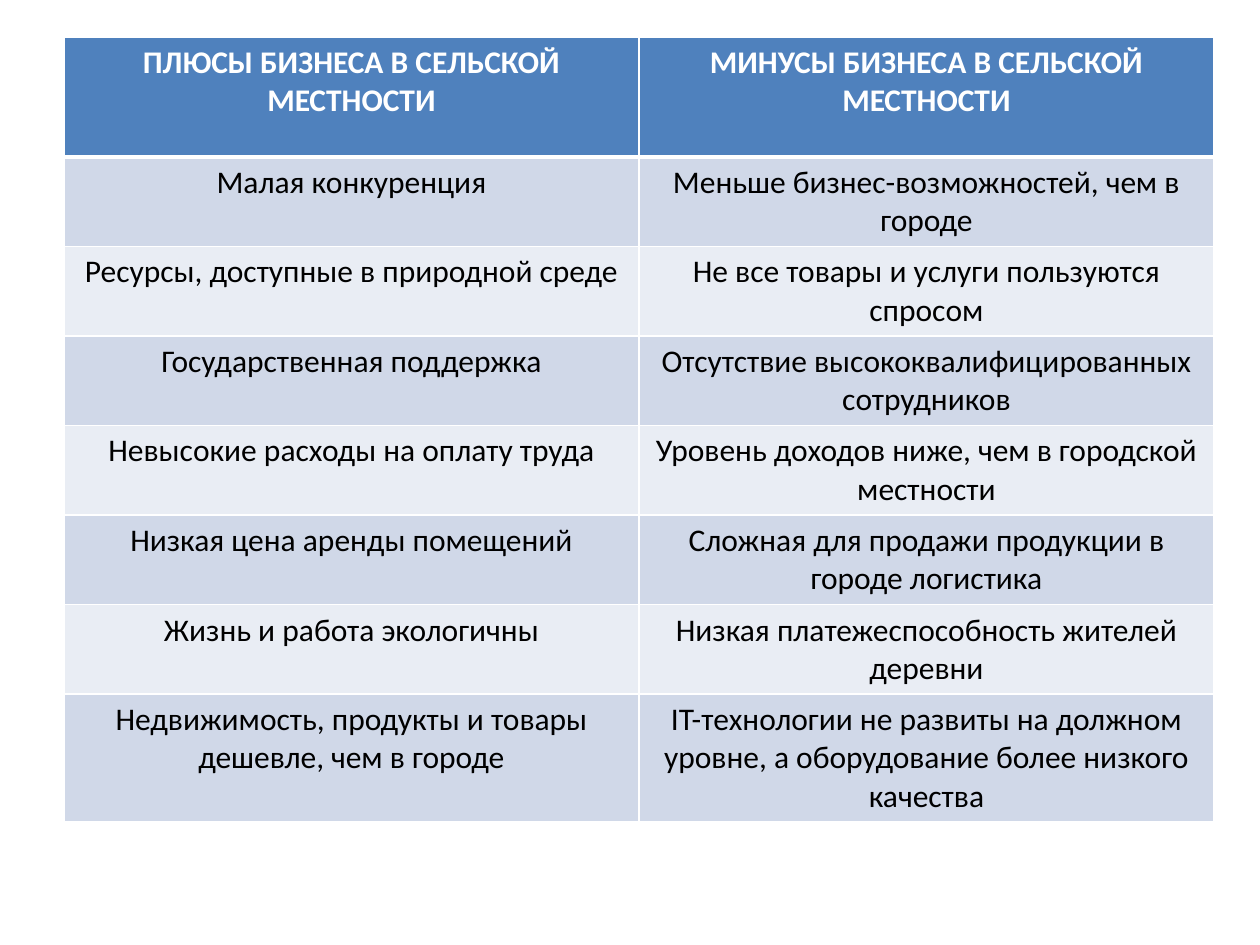
from lxml.etree import SubElement
from pptx import Presentation
from pptx.dml.color import RGBColor
from pptx.enum.text import PP_ALIGN
from pptx.oxml.ns import qn
from pptx.util import Emu, Pt

HEADINGS = ("ПЛЮСЫ БИЗНЕСА В СЕЛЬСКОЙ МЕСТНОСТИ", "МИНУСЫ БИЗНЕСА В СЕЛЬСКОЙ МЕСТНОСТИ")
ROWS = [
    ("Малая конкуренция", "Меньше бизнес-возможностей, чем в городе"),
    ("Ресурсы, доступные в природной среде", "Не все товары и услуги пользуются спросом"),
    ("Государственная поддержка", "Отсутствие высококвалифицированных сотрудников"),
    ("Невысокие расходы на оплату труда", "Уровень доходов ниже, чем в городской местности"),
    ("Низкая цена аренды помещений", "Сложная для продажи продукции в городе логистика"),
    ("Жизнь и работа экологичны", "Низкая платежеспособность жителей деревни"),
    ("Недвижимость, продукты и товары дешевле, чем в городе",
     "IT-технологии не развиты на должном уровне, а оборудование более низкого качества"),
]
HEADER_FILL = "4F81BD"
BAND_FILLS = ("D0D8E8", "E9EDF4")
BORDER = "FFFFFF"
LEFT, TOP = 64, 37
COLUMN_WIDTH, HEADER_HEIGHT, ROW_HEIGHT = 575, 120, 69


def px(length):
    return Emu(round(length * 914400 / 126))


def color(value):
    return RGBColor.from_string(value)


def add_borders(cell, bottom_width):
    """Must run before the cell's fill is set: lines precede the fill in the XML."""
    properties = cell._tc.get_or_add_tcPr()
    for side, width in (("L", 1), ("R", 1), ("T", 1), ("B", bottom_width)):
        line = SubElement(properties, qn(f"a:ln{side}"), w=str(Pt(width)))
        fill = SubElement(line, qn("a:solidFill"))
        SubElement(fill, qn("a:srgbClr"), val=BORDER)


def fill_cell(cell, text, fill, is_header):
    add_borders(cell, 3 if is_header else 1)
    cell.fill.solid()
    cell.fill.fore_color.rgb = color(fill)
    para = cell.text_frame.paragraphs[0]
    para.text = text
    para.alignment = PP_ALIGN.CENTER
    font = para.runs[0].font
    font.name, font.size, font.bold = "Calibri", Pt(18), is_header
    font.color.rgb = color("FFFFFF" if is_header else "000000")


def main():
    deck = Presentation()
    deck.slide_width, deck.slide_height = px(1260), px(945)
    page = deck.slides.add_slide(deck.slide_layouts[6])

    content = [HEADINGS, *ROWS]
    height = HEADER_HEIGHT + ROW_HEIGHT * len(ROWS)
    table = page.shapes.add_table(
        len(content), len(HEADINGS), px(LEFT), px(TOP),
        px(COLUMN_WIDTH * len(HEADINGS)), px(height)).table
    for column in table.columns:
        column.width = px(COLUMN_WIDTH)

    for index, texts in enumerate(content):
        is_header = index == 0
        table.rows[index].height = px(HEADER_HEIGHT if is_header else ROW_HEIGHT)
        fill = HEADER_FILL if is_header else BAND_FILLS[(index - 1) % 2]
        for cell, text in zip(table.rows[index].cells, texts):
            fill_cell(cell, text, fill, is_header)

    deck.save("out.pptx")


if __name__ == "__main__":
    main()
